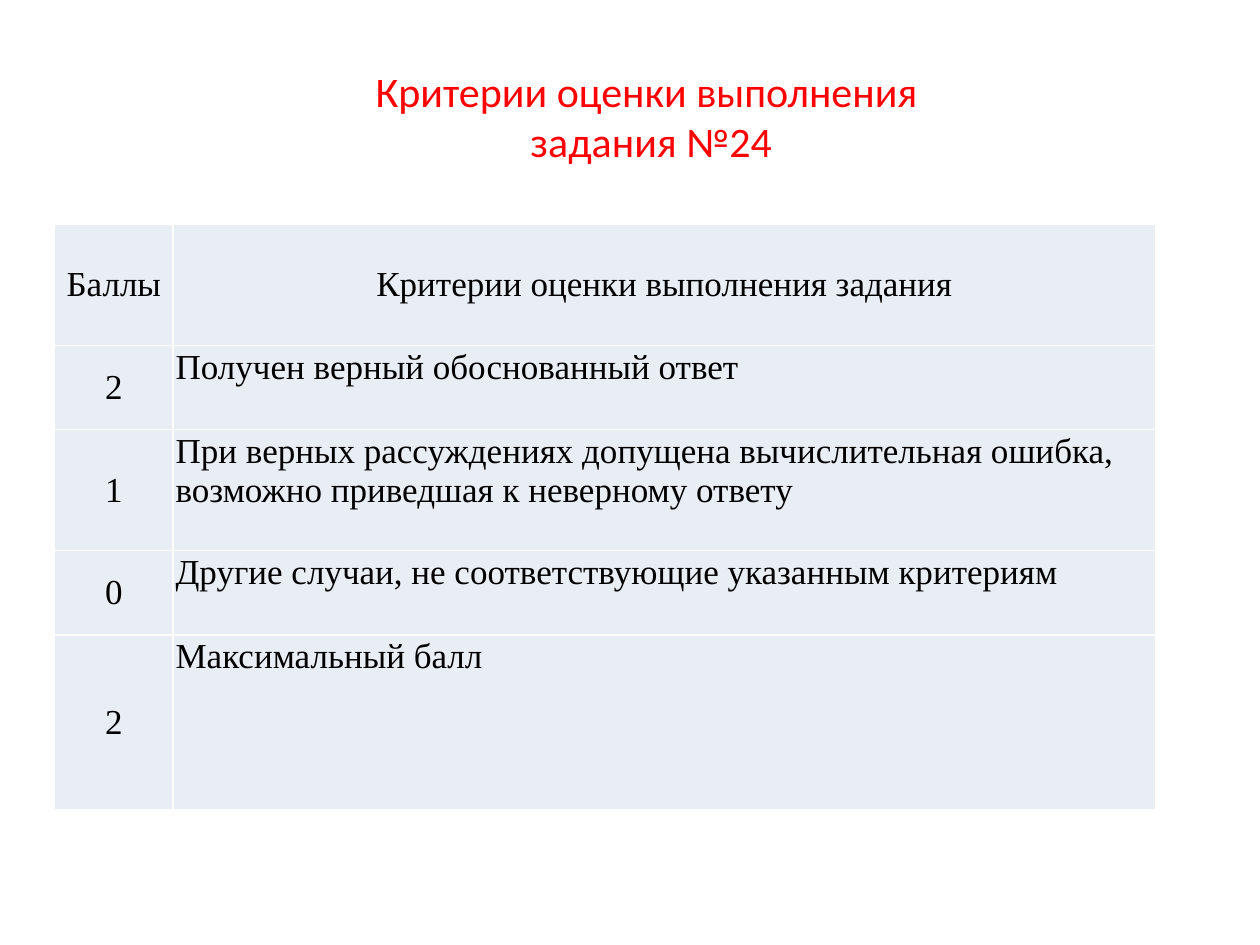
from lxml import etree
from pptx import Presentation
from pptx.dml.color import RGBColor
from pptx.enum.text import MSO_ANCHOR, PP_ALIGN
from pptx.oxml.ns import qn
from pptx.util import Cm, Pt

CENTER, LEFT = PP_ALIGN.CENTER, PP_ALIGN.LEFT
MIDDLE, TOP = MSO_ANCHOR.MIDDLE, MSO_ANCHOR.TOP
TITLE_ONLY = 5

CRITERIA = [
    ("Баллы", "Критерии оценки выполнения задания", 2.44, 0),
    ("2", "Получен верный обоснованный ответ", 1.7, 1.2),
    ("1", "При верных рассуждениях допущена вычислительная ошибка, "
          "возможно приведшая к неверному ответу", 2.44, 0),
    ("0", "Другие случаи, не соответствующие указанным критериям", 1.7, 1.2),
    ("2", "Максимальный балл", 3.53, 0),
]


def color(value):
    return RGBColor.from_string(value)


def apply(target, values):
    for name, value in values.items():
        setattr(target, name, value)


def fill(target, value):
    target.fill.solid()
    target.fill.fore_color.rgb = color(value)


class CriteriaSlide:
    title_font = {"name": "Calibri", "size": Pt(24)}
    cell_font = {"name": "Times New Roman", "size": Pt(20)}
    cell_insets = {f"margin_{side}": Cm(0.05)
                   for side in ("left", "top", "right", "bottom")}
    white, cell_fill, red, black = "FFFFFF", "E9EDF4", "FF0000", "000000"

    def __init__(self, deck):
        self.slide = deck.slides.add_slide(deck.slide_layouts[TITLE_ONLY])

    def title(self, text, left, top, width, height):
        heading = self.slide.shapes.title
        apply(heading, {"left": Cm(left), "top": Cm(top),
                        "width": Cm(width), "height": Cm(height)})
        fill(heading, self.white)
        frame = heading.text_frame
        apply(frame, {"text": text, "vertical_anchor": MIDDLE, "word_wrap": True})
        self.paragraph(frame.paragraphs[0], self.title_font, self.red, CENTER)

    def paragraph(self, paragraph, font, font_color, alignment, spacing=0):
        apply(paragraph, {"alignment": alignment, "space_before": Pt(spacing),
                          "space_after": Pt(spacing)})
        for run in paragraph.runs:
            apply(run.font, font)
            run.font.color.rgb = color(font_color)

    def borders(self, cell):
        properties = cell._tc.get_or_add_tcPr()
        for index, side in enumerate(("lnL", "lnR", "lnT", "lnB")):
            line = etree.Element(qn(f"a:{side}"), w=str(Pt(1)))
            solid = etree.SubElement(line, qn("a:solidFill"))
            etree.SubElement(solid, qn("a:srgbClr"), val=self.white)
            properties.insert(index, line)

    def cell(self, cell, text, centered, spacing):
        apply(cell, {"text": text, "vertical_anchor": MIDDLE if centered else TOP,
                     **self.cell_insets})
        fill(cell, self.cell_fill)
        self.borders(cell)
        self.paragraph(cell.text_frame.paragraphs[0], self.cell_font, self.black,
                       CENTER if centered else LEFT, spacing)

    def table(self, rows, left, top, widths):
        heights = [height for _, _, height, _ in rows]
        table = self.slide.shapes.add_table(
            len(rows), len(widths), Cm(left), Cm(top),
            Cm(sum(widths)), Cm(sum(heights))).table
        apply(table, {"first_row": False, "horz_banding": False})
        for column, width in zip(table.columns, widths):
            column.width = Cm(width)
        for index, (score, criterion, height, spacing) in enumerate(rows):
            table.rows[index].height = Cm(height)
            self.cell(table.cell(index, 0), score, True, 0)
            self.cell(table.cell(index, 1), criterion, index == 0, spacing)


def main():
    deck = Presentation()
    apply(deck, {"slide_width": Cm(25.4), "slide_height": Cm(19.05)})
    page = CriteriaSlide(deck)
    page.title("Критерии оценки выполнения \vзадания №24", 1.7, 0.74, 22.86, 3.18)
    page.table(CRITERIA, 1.1, 4.52, (2.39, 19.81))
    deck.save("out.pptx")


if __name__ == "__main__":
    main()
